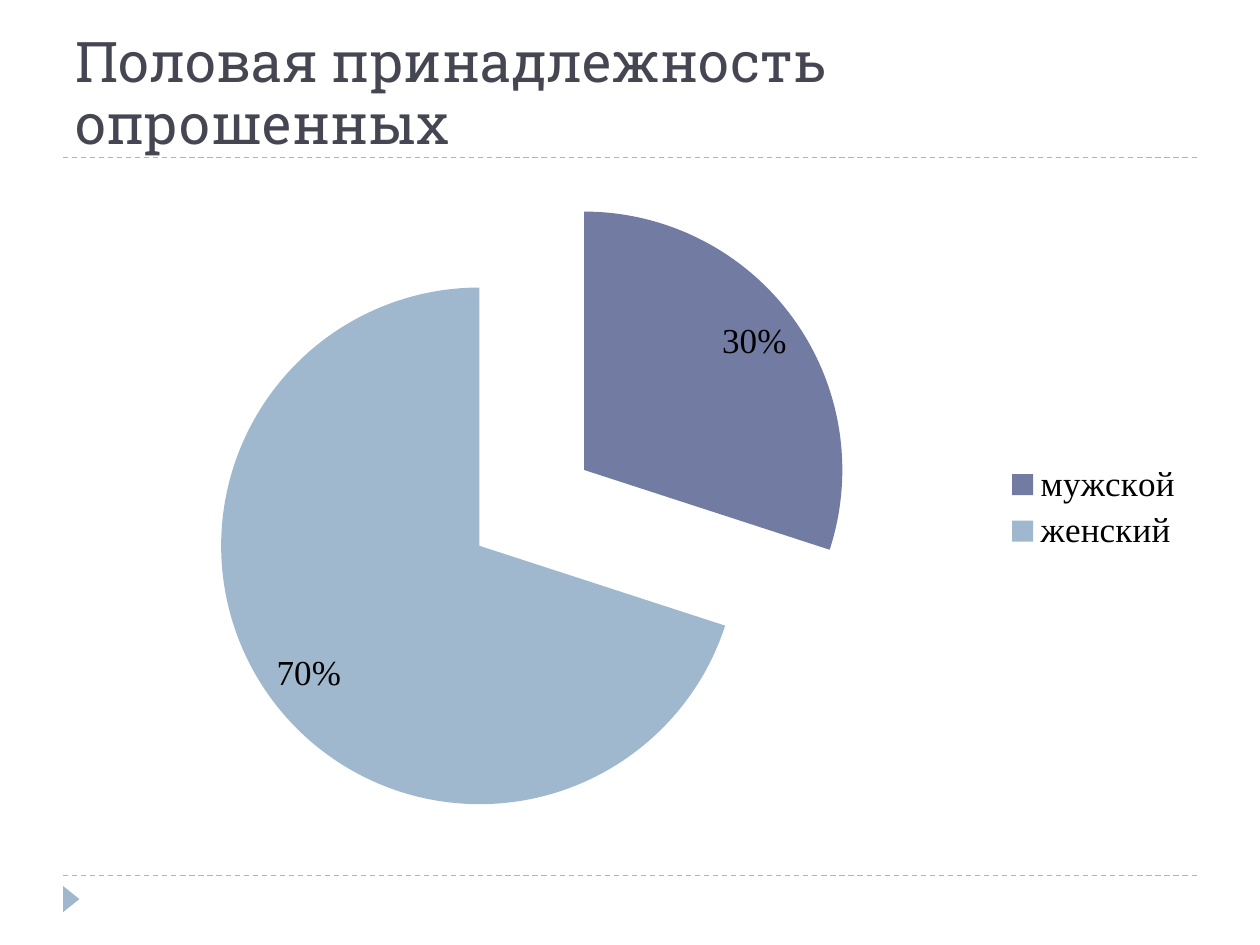
from lxml.etree import SubElement
from pptx import Presentation
from pptx.chart.data import CategoryChartData
from pptx.dml.color import RGBColor
from pptx.enum.chart import XL_CHART_TYPE, XL_LABEL_POSITION, XL_LEGEND_POSITION
from pptx.enum.dml import MSO_LINE
from pptx.enum.shapes import MSO_CONNECTOR, MSO_SHAPE
from pptx.enum.text import MSO_ANCHOR, PP_ALIGN
from pptx.oxml.ns import qn
from pptx.util import Cm, Pt

INK = "464653"
BLACK = "000000"
PURPLE = "727CA3"
BLUE = "9FB8CD"


def color(hex_string):
    """Return the colour for a hex string."""
    return RGBColor.from_string(hex_string)


def style_font(font, name, size, hex_string):
    """Set the typeface, size and colour of a font."""
    font.name = name
    font.size = Pt(size)
    font.color.rgb = color(hex_string)


def add_rule(slide, left, top, width):
    """Draw a dashed horizontal rule."""
    rule = slide.shapes.add_connector(
        MSO_CONNECTOR.STRAIGHT, Cm(left), Cm(top), Cm(left + width), Cm(top)
    )
    rule.line.color.rgb = color(BLUE)
    rule.line.width = Pt(0.75)
    rule.line.dash_style = MSO_LINE.DASH
    SubElement(rule._element.spPr, qn("a:effectLst"))


def add_header(slide, left, top, width, height, text):
    """Place the title with a rule along its bottom edge."""
    add_rule(slide, left, top + height, width)
    title = slide.shapes.add_textbox(Cm(left), Cm(top), Cm(width), Cm(height))
    frame = title.text_frame
    frame.word_wrap = True
    frame.vertical_anchor = MSO_ANCHOR.BOTTOM
    frame.margin_top = frame.margin_bottom = 0
    frame.text = text
    paragraph = frame.paragraphs[0]
    paragraph.alignment = PP_ALIGN.LEFT
    paragraph.line_spacing = 0.92
    style_font(paragraph.runs[0].font, "Roboto Slab", 32, INK)


def add_gender_chart(slide, left, top, width, height):
    """Place the exploded pie chart with its legend on the right."""
    data = CategoryChartData()
    data.categories = ["мужской", "женский"]
    data.add_series("Series 1", (30, 70))
    chart = slide.shapes.add_chart(
        XL_CHART_TYPE.PIE_EXPLODED, Cm(left), Cm(top), Cm(width), Cm(height), data
    ).chart
    style_font(chart.font, "Calibri", 18, BLACK)
    chart.has_title = False
    chart.has_legend = True
    chart.legend.position = XL_LEGEND_POSITION.RIGHT
    chart.legend.include_in_layout = False
    style_font(chart.legend.font, "Times New Roman", 20, BLACK)

    plot = chart.plots[0]
    plot.vary_by_categories = True
    series = plot.series[0]
    for explosion in series._element.findall(qn("c:explosion")):
        explosion.set("val", "25")
    for index, fill_color in enumerate((PURPLE, BLUE)):
        fill = series.points[index].format.fill
        fill.solid()
        fill.fore_color.rgb = color(fill_color)

    plot.has_data_labels = True
    labels = plot.data_labels
    labels.show_percentage = True
    labels.show_value = False
    labels.number_format = "0%"
    labels.number_format_is_linked = False
    labels.position = XL_LABEL_POSITION.INSIDE_END
    style_font(labels.font, "Times New Roman", 20, BLACK)


def add_footer(slide, left, top, width):
    """Place the bottom rule with a right-pointing marker below it."""
    add_rule(slide, left, top, width)
    marker = slide.shapes.add_shape(
        MSO_SHAPE.ISOSCELES_TRIANGLE, Cm(left - 0.1), Cm(top + 0.31), Cm(0.53), Cm(0.33)
    )
    marker.rotation = 90
    marker.shadow.inherit = False
    marker.fill.solid()
    marker.fill.fore_color.rgb = color(BLUE)
    marker.line.fill.background()


def main():
    """Build and save the slide."""
    presentation = Presentation()
    presentation.slide_width = Cm(25.4)
    presentation.slide_height = Cm(19.05)
    slide = presentation.slides.add_slide(presentation.slide_layouts[6])
    left, width = 1.27, 22.86
    add_footer(slide, left, 17.65, width)
    add_header(slide, left, 0.43, width, 2.74, "Половая принадлежность опрошенных")
    add_gender_chart(slide, left, 3.38, width, 13.72)
    presentation.save("out.pptx")


if __name__ == "__main__":
    main()
